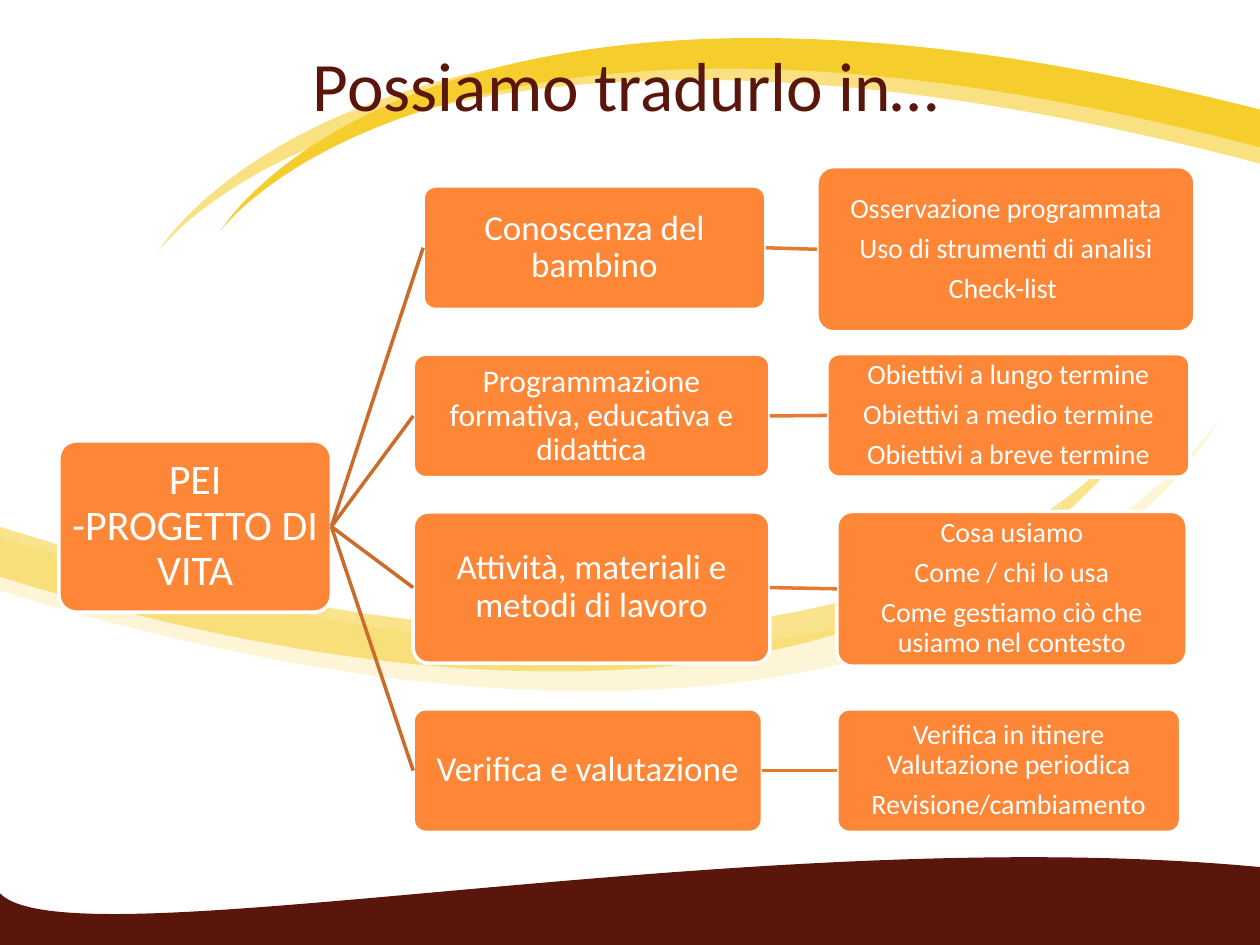
from dataclasses import dataclass

from lxml.etree import SubElement
from pptx import Presentation
from pptx.dml.color import RGBColor
from pptx.enum.shapes import MSO_CONNECTOR as Link, MSO_SHAPE as Preset
from pptx.enum.text import MSO_ANCHOR as Anchor, PP_ALIGN as Align
from pptx.oxml.ns import qn
from pptx.shapes.autoshape import Shape
from pptx.shapes.shapetree import SlideShapes
from pptx.text.text import TextFrame
from pptx.util import Cm, Pt

Point = tuple[float, float]

FONT = "Calibri"
WHITE, BROWN, ORANGE = "FFFFFF", "5A160B", "FE8637"
GOLD, LIGHT_GOLD, CREAM = "F5CD2D", "F9E181", "FDF5D5"
BRANCH, DETAIL_LINK = "CB6B2C", "E77A32"


@dataclass(frozen=True)
class Ribbon:
    start: Point
    outer: Point
    tip: Point
    inner: Point
    end: Point
    color: str
    opacity: int = 100


@dataclass(frozen=True)
class Card:
    left: float
    top: float
    width: float
    height: float
    size: int
    lines: tuple[str, ...]
    inset: float = 0.11


HILL = [(0, 18.01), (1.42, 19.48), (15.14, 16.51), (25.4, 17.48), (25.4, 19.05), (0, 19.05)]

RIBBONS = [
    Ribbon((0, 10.82), (19.38, 16.97), (24.56, 8.46), (19.86, 17.98), (0, 11.91), CREAM),
    Ribbon((25.4, 3.3), (7.85, -1.35), (3.18, 5.08), (7.42, -2.11), (25.4, 2.46), LIGHT_GOLD),
    Ribbon((25.4, 2.97), (8.86, -1.4), (4.45, 4.65), (8.46, -2.11), (25.4, 2.21), GOLD),
    Ribbon((0, 10.62), (18.29, 16.41), (23.14, 8.38), (18.72, 17.35), (0, 11.63), GOLD, 54),
]

PROJECT = Card(1.19, 8.89, 5.49, 3.45, 24, ("PEI -PROGETTO DI VITA",), 0.15)

TOPICS = [
    (
        Card(8.53, 3.75, 6.91, 2.49, 20, ("Conoscenza del bambino",)),
        Card(16.47, 3.36, 7.62, 3.33, 16,
             ("Osservazione programmata", "Uso di strumenti di analisi", "Check-list ")),
    ),
    (
        Card(8.33, 7.14, 7.19, 2.49, 18, ("Programmazione formativa, educativa e didattica",)),
        Card(16.67, 7.13, 7.32, 2.49, 16,
             ("Obiettivi a lungo termine", "Obiettivi a medio termine",
              "Obiettivi a breve termine")),
    ),
    (
        Card(8.33, 10.32, 7.19, 3.05, 20, ("Attività, materiali e metodi di lavoro",)),
        Card(16.87, 10.31, 7.06, 3.12, 16,
             ("Cosa usiamo", "Come / chi lo usa", "Come gestiamo ciò che usiamo nel contesto")),
    ),
    (
        Card(8.33, 14.29, 7.04, 2.49, 20, ("Verifica e valutazione",)),
        Card(16.87, 14.29, 6.93, 2.49, 16,
             ("Verifica in itinere Valutazione periodica", "Revisione/cambiamento")),
    ),
]


def rgb(color: str) -> RGBColor:
    return RGBColor.from_string(color)


def bend(outline: Shape, curves: int) -> None:
    lines = list(outline._element.iter(qn("a:lnTo")))
    for first in range(0, 3 * curves, 3):
        head, *others = lines[first:first + 3]
        head.tag = qn("a:cubicBezTo")
        for line in others:
            head.append(line[0])
            line.getparent().remove(line)


def draw_outline(shapes: SlideShapes, points: list[Point], curves: int, color: str,
                 opacity: int = 100) -> None:
    corners = [(Cm(x), Cm(y)) for x, y in points]
    builder = shapes.build_freeform(*corners[0])
    builder.add_line_segments(corners[1:], close=True)
    outline = builder.convert_to_shape()
    bend(outline, curves)
    outline.shadow.inherit = False
    outline.line.fill.background()
    outline.fill.solid()
    outline.fill.fore_color.rgb = rgb(color)
    if opacity < 100:
        tint = outline._element.spPr.find(f"{qn('a:solidFill')}/{qn('a:srgbClr')}")
        SubElement(tint, qn("a:alpha"), val=str(opacity * 1000))


def draw_ribbon(shapes: SlideShapes, ribbon: Ribbon) -> None:
    points = [ribbon.start, ribbon.outer, ribbon.tip, ribbon.tip,
              ribbon.tip, ribbon.inner, ribbon.end]
    draw_outline(shapes, points, 2, ribbon.color, ribbon.opacity)


def write_lines(frame: TextFrame, lines: tuple[str, ...], size: float, color: str,
                inset: float, spacing: float = 1) -> None:
    frame.word_wrap = True
    frame.vertical_anchor = Anchor.MIDDLE
    frame.margin_left = frame.margin_right = Cm(inset)
    frame.margin_top = frame.margin_bottom = Cm(inset)
    for index, line in enumerate(lines):
        paragraph = frame.add_paragraph() if index else frame.paragraphs[0]
        paragraph.alignment = Align.CENTER
        paragraph.line_spacing = spacing
        paragraph.space_after = Pt(size * 0.35)
        run = paragraph.add_run()
        run.text = line
        run.font.name = FONT
        run.font.size = Pt(size)
        run.font.color.rgb = rgb(color)


def draw_card(shapes: SlideShapes, card: Card) -> Shape:
    box = shapes.add_shape(Preset.ROUNDED_RECTANGLE, Cm(card.left), Cm(card.top),
                           Cm(card.width), Cm(card.height))
    box.adjustments[0] = 0.1
    box.shadow.inherit = False
    box.fill.solid()
    box.fill.fore_color.rgb = rgb(ORANGE)
    box.line.color.rgb = rgb(WHITE)
    box.line.width = Pt(2)
    write_lines(box.text_frame, card.lines, card.size, WHITE, card.inset, 0.9)
    return box


def join(shapes: SlideShapes, source: Shape, target: Shape, color: str) -> None:
    link = shapes.add_connector(Link.STRAIGHT, 0, 0, 0, 0)
    link.begin_connect(source, 3)
    link.end_connect(target, 1)
    link.line.color.rgb = rgb(color)
    link.line.width = Pt(2)
    SubElement(link._element.spPr, qn("a:effectLst"))


def main() -> None:
    deck = Presentation()
    deck.slide_width, deck.slide_height = Cm(25.4), Cm(19.05)
    shapes = deck.slides.add_slide(deck.slide_layouts[6]).shapes

    draw_outline(shapes, HILL, 1, BROWN)
    for ribbon in RIBBONS:
        draw_ribbon(shapes, ribbon)

    title = shapes.add_textbox(Cm(1.19), Cm(0.79), Cm(22.86), Cm(1.78))
    write_lines(title.text_frame, ("Possiamo tradurlo in…",), 39.6, BROWN, 0.1)

    project = draw_card(shapes, PROJECT)
    for topic_card, detail_card in TOPICS:
        topic = draw_card(shapes, topic_card)
        detail = draw_card(shapes, detail_card)
        join(shapes, project, topic, BRANCH)
        join(shapes, topic, detail, DETAIL_LINK)

    deck.save("out.pptx")


if __name__ == "__main__":
    main()
